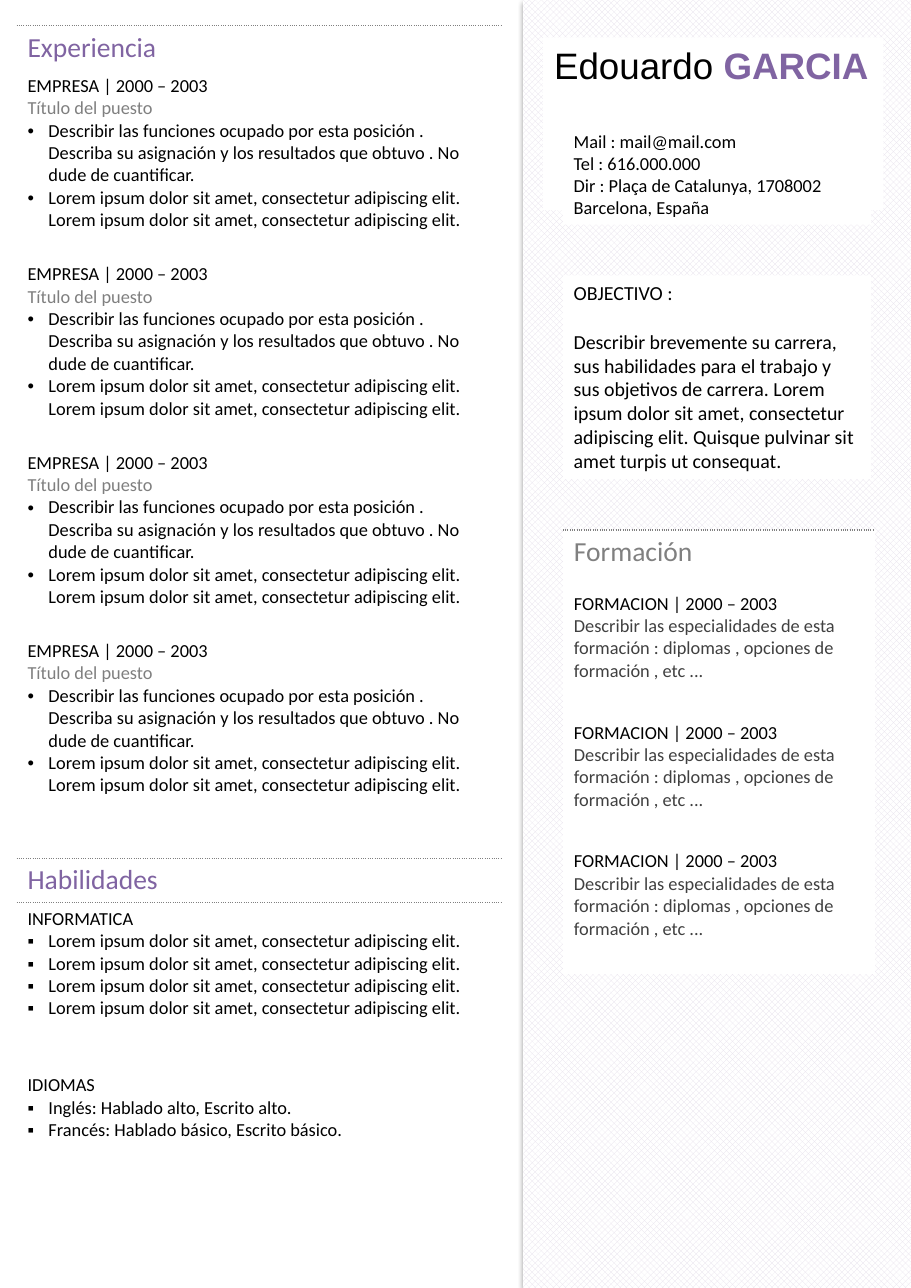
from lxml import etree
from pptx import Presentation
from pptx.dml.color import RGBColor
from pptx.enum import dml, shapes, text
from pptx.oxml import parse_xml
from pptx.oxml.ns import nsdecls, qn
from pptx.util import Inches, Pt

rgb = RGBColor.from_string
BLACK, WHITE, PURPLE, GRAY = "000000", "FFFFFF", "8064A2", "808080"


def write(frame, lines, size=12):
    for index, (content, color, bullet) in enumerate(lines):
        paragraph = frame.add_paragraph() if index else frame.paragraphs[0]
        paragraph.alignment = text.PP_ALIGN.LEFT
        if bullet:
            props = paragraph._p.get_or_add_pPr()
            props.set("marL", str(Inches(0.19)))
            props.set("indent", str(Inches(-0.19)))
            etree.SubElement(props, qn("a:buFont")).set("typeface", "Arial")
            etree.SubElement(props, qn("a:buChar")).set("char", bullet)
        run = paragraph.add_run()
        run.text = content
        run.font.name = "Calibri"
        run.font.size = Pt(size)
        run.font.color.rgb = rgb(color)


def build_table(left, top, width, rows, fill):
    heights = [row[0] for row in rows]
    table = slide.shapes.add_table(len(rows), 1, Inches(left), Inches(top),
                                   Inches(width), Inches(sum(heights))).table
    table.first_row = table.horz_banding = False
    style = table._tbl.tblPr.find(qn("a:tableStyleId"))
    style.text = "{2D5ABB26-0587-4C30-8999-92F81FD0307C}"
    for index, (height, size, lines, edge) in enumerate(rows):
        table.rows[index].height = Inches(height)
        cell = table.cell(index, 0)
        if fill:
            cell.fill.solid()
            cell.fill.fore_color.rgb = rgb(fill)
        else:
            cell.fill.background()
        if edge:
            cell._tc.get_or_add_tcPr().insert(0, parse_xml(
                f'<a:{edge} {nsdecls("a")} w="12700"><a:solidFill><a:srgbClr val="{GRAY}"/>'
                f'</a:solidFill><a:prstDash val="sysDot"/></a:{edge}>'))
        if lines:
            write(cell.text_frame, lines, size)
        else:
            blank = cell.text_frame.paragraphs[0]._p
            etree.SubElement(blank, qn("a:endParaRPr")).set("sz", str(size * 100))


deck = Presentation()
deck.slide_width, deck.slide_height = Inches(8.27), Inches(11.69)
slide = deck.slides.add_slide(deck.slide_layouts[5])

sidebar = slide.shapes.add_shape(shapes.MSO_SHAPE.RECTANGLE, Inches(4.75), 0,
                                 Inches(3.52), Inches(11.69))
sidebar.fill.patterned()
sidebar.fill.pattern = dml.MSO_PATTERN.LARGE_CHECKER_BOARD
sidebar.fill.fore_color.rgb = rgb("E6E0EC")
sidebar.fill.back_color.rgb = rgb(WHITE)
sidebar.line.fill.background()
sidebar.shadow.inherit = False
sidebar._element.spPr.find(qn("a:effectLst")).append(parse_xml(
    f'<a:outerShdw {nsdecls("a")} blurRad="{Pt(3.1)}" dist="{Pt(1.8)}" dir="5400000" '
    f'rotWithShape="0"><a:srgbClr val="{BLACK}"><a:alpha val="35000"/></a:srgbClr>'
    '</a:outerShdw>'))
slide.shapes._spTree.insert(2, sidebar._element)

name = slide.shapes.title
name.left, name.top, name.width, name.height = map(Inches, (4.93, 0.34, 3.09, 0.5))
name.fill.solid()
name.fill.fore_color.rgb = rgb(WHITE)
name.text_frame.word_wrap = False
name.text_frame.auto_size = text.MSO_AUTO_SIZE.SHAPE_TO_FIT_TEXT
name.text_frame.vertical_anchor = text.MSO_ANCHOR.TOP
name.text_frame.paragraphs[0].alignment = text.PP_ALIGN.LEFT
for part, color, bold in [("Edouardo ", BLACK, False), ("GARCIA", PURPLE, True)]:
    run = name.text_frame.paragraphs[0].add_run()
    run.text = part
    run.font.name, run.font.size, run.font.bold = "Arial", Pt(24), bold
    run.font.color.rgb = rgb(color)

contact = ["Mail : mail@mail.com", "Tel : 616.000.000",
           "Dir : Plaça de Catalunya, 1708002 Barcelona, España"]
objective = ["OBJECTIVO :",
             "Describir brevemente su carrera, sus habilidades para el trabajo y sus objetivos "
             "de carrera. Lorem ipsum dolor sit amet, consectetur adipiscing elit. Quisque "
             "pulvinar sit amet turpis ut consequat."]
for top, height, size, gap, lines in [(1.13, 0.91, 12, 0, contact),
                                      (2.5, 1.85, 13, 16, objective)]:
    card = slide.shapes.add_textbox(Inches(5.11), Inches(top), Inches(2.8), Inches(height))
    card.fill.solid()
    card.fill.fore_color.rgb = rgb(WHITE)
    card.text_frame.word_wrap = True
    card.text_frame.auto_size = text.MSO_AUTO_SIZE.SHAPE_TO_FIT_TEXT
    write(card.text_frame, [(line, BLACK, None) for line in lines], size)
    for paragraph in card.text_frame.paragraphs[1:]:
        paragraph.space_before = Pt(gap)

lorem = "Lorem ipsum dolor sit amet, consectetur adipiscing elit."
job = [("EMPRESA | 2000 – 2003", BLACK, None),
       ("Título del puesto", "7F7F7F", None),
       ("Describir las funciones ocupado por esta posición . Describa su asignación y los "
        "resultados que obtuvo . No dude de cuantificar.", BLACK, "•"),
       (f"{lorem} {lorem}", BLACK, "•")]
computing = [("INFORMATICA", BLACK, None)] + [(lorem, BLACK, "▪")] * 4
languages = [("IDIOMAS", BLACK, None),
             ("Inglés: Hablado alto, Escrito alto.", BLACK, "▪"),
             ("Francés: Hablado básico, Escrito básico.", BLACK, "▪")]
build_table(0.15, 0.23, 4.41, [
    (0.4, 18, [("Experiencia", PURPLE, None)], "lnT"),
    *[(1.71, 12, job, None)] * 4,
    (0.32, 12, [], "lnB"),
    (0.4, 18, [("Habilidades", PURPLE, None)], "lnT"),
    (1.51, 12, computing, None),
    (0.9, 12, languages, None),
    (0.32, 12, [], None),
], None)

course = [("FORMACION | 2000 – 2003", BLACK, None),
          ("Describir las especialidades de esta formación : diplomas , opciones de "
           "formación , etc ...", "404040", None)]
build_table(5.11, 4.81, 2.83, [
    (0.52, 18, [("Formación", GRAY, None)], "lnT"),
    *[(1.17, 12, course, None)] * 3,
], WHITE)

deck.save("out.pptx")
